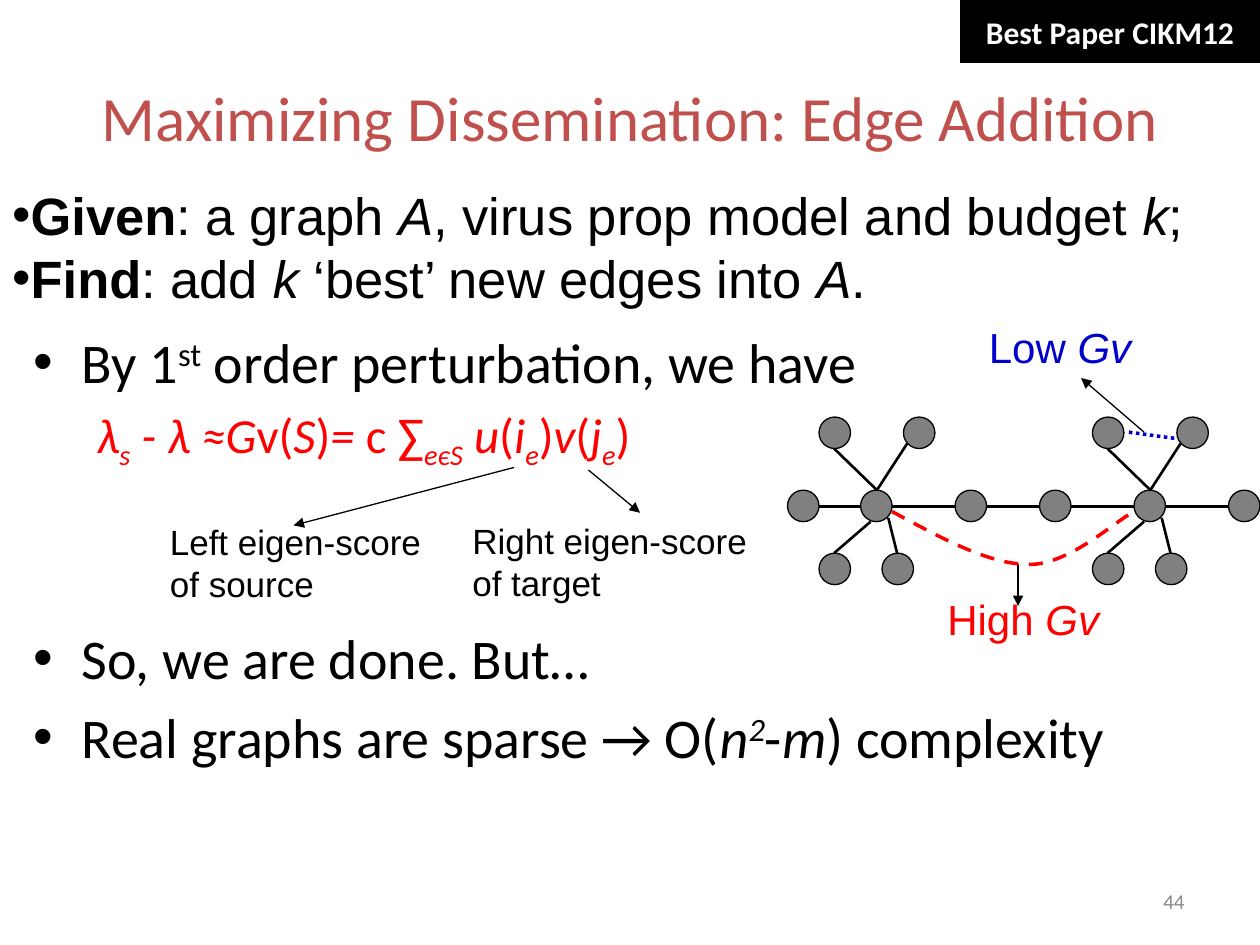
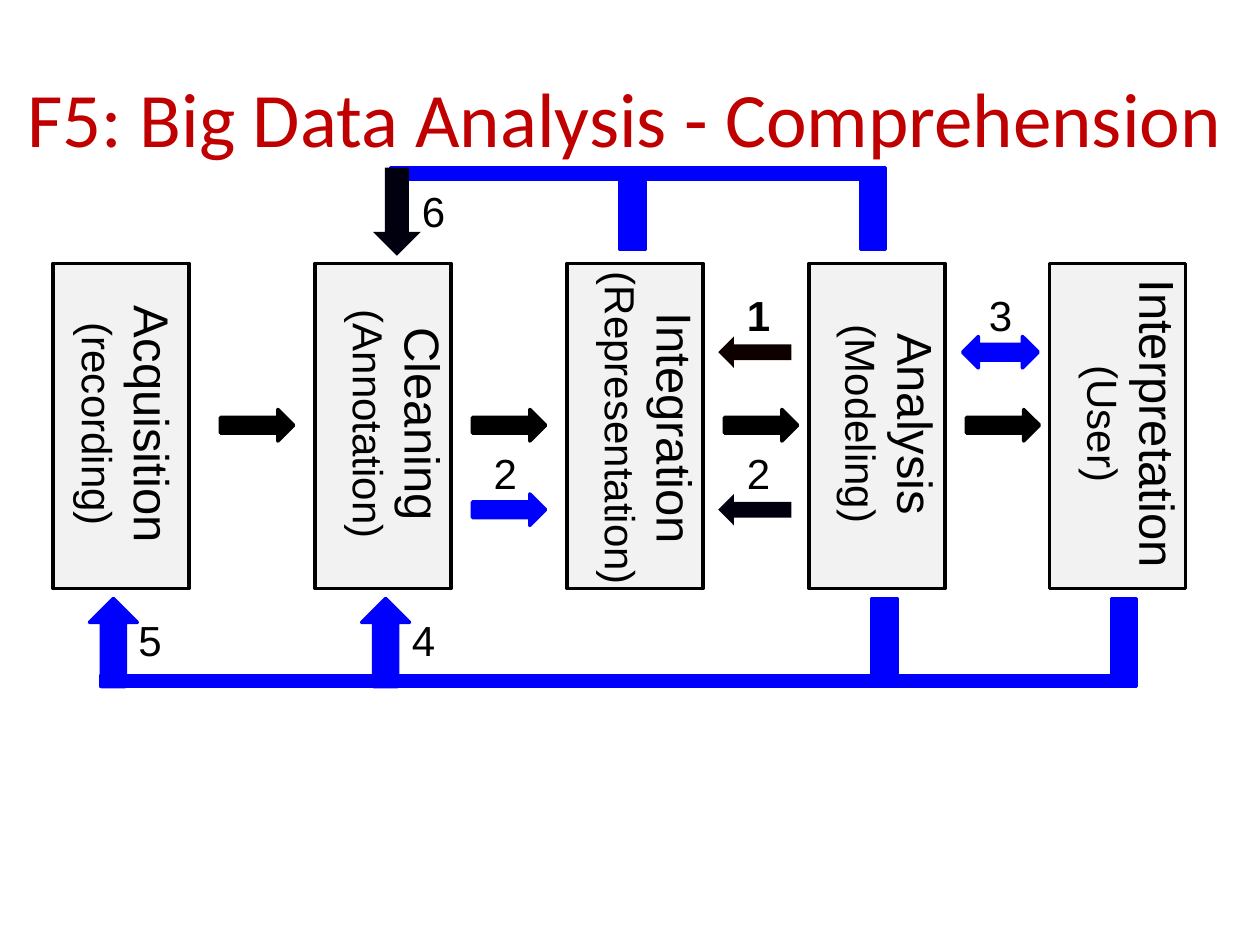
import pptx
import pptx.util
import pptx.dml.color
import pptx.enum.dml
import pptx.enum.shapes
import pptx.enum.text
import pptx.oxml.ns
import lxml.etree

Inches = pptx.util.Inches
Pt = pptx.util.Pt
RGB = pptx.dml.color.RGBColor.from_string
KIND = pptx.enum.shapes.MSO_SHAPE
DASH = pptx.enum.dml.MSO_LINE
ALIGN = pptx.enum.text.PP_ALIGN
MIDDLE = pptx.enum.text.MSO_ANCHOR.MIDDLE
FIT = pptx.enum.text.MSO_AUTO_SIZE.SHAPE_TO_FIT_TEXT
qn = pptx.oxml.ns.qn

HUES = {"black": "000000", "white": "FFFFFF", "coral": "C0504D",
        "crimson": "C00000", "red": "FF0000", "navy": "0000CC",
        "blue": "0000FF", "node": "808080", "box": "F2F2F2",
        "page": "898989", "dusk": "00000F", "rust": "0F0000"}
BASE = {"^": "30000", "_": "-25000"}
LEFT, MID, RIGHT = ALIGN.LEFT, ALIGN.CENTER, ALIGN.RIGHT


def write(shape, paras, size=24, hue="black", font="Arial", align=LEFT,
          wrap=False, anchor=None):
    """Fill a shape; a run is (text, marks): b bold, i italic, ^ super, _ sub."""
    frame = shape.text_frame
    frame.word_wrap = wrap
    if not wrap:
        frame.auto_size = FIT
    if anchor is not None:
        frame.vertical_anchor = anchor
    for n, para in enumerate(paras):
        if not isinstance(para, dict):
            para = {"runs": para}
        item = frame.paragraphs[0] if n == 0 else frame.add_paragraph()
        item.alignment = align
        props = item._p.get_or_add_pPr()
        if "indent" in para:
            left, first = para["indent"]
            props.set("marL", str(Inches(left)))
            props.set("indent", str(Inches(first)))
        if para.get("bullet"):
            lxml.etree.SubElement(props, qn("a:buFont")).set("typeface", "Arial")
            lxml.etree.SubElement(props, qn("a:buChar")).set("char", "•")
        if "before" in para:
            item.space_before = Pt(para["before"])
        runs = para["runs"]
        for text, marks in [(runs, "")] if isinstance(runs, str) else runs:
            run = item.add_run()
            run.text = text
            look = {"name": font, "size": Pt(para.get("size", size)),
                    "bold": "b" in marks, "italic": "i" in marks}
            for key, value in look.items():
                setattr(run.font, key, value)
            run.font.color.rgb = RGB(HUES[para.get("hue", hue)])
            for mark in BASE:
                if mark in marks:
                    run.font._element.set("baseline", BASE[mark])


def draw(slide, kind, box, fill, edge=None, width=2):
    shape = slide.shapes.add_shape(kind, *map(Inches, box))
    shape.shadow.inherit = False
    shape.fill.solid()
    shape.fill.fore_color.rgb = RGB(HUES[fill])
    if edge:
        shape.line.color.rgb = RGB(HUES[edge])
        shape.line.width = Pt(width)
    else:
        shape.line.fill.background()
    return shape


deck = pptx.Presentation()
deck.slide_width, deck.slide_height = Inches(10), Inches(7.5)
pages = []
for title, width, size, hue in [
        ("Maximizing Dissemination: Edge Addition", 10, 36, "coral"),
        ("F5: Big Data Analysis - Comprehension", 9.92, 44, "crimson")]:
    page = deck.slides.add_slide(deck.slide_layouts[6])
    head = page.shapes.add_textbox(0, Inches(0.3), Inches(width), Inches(1.25))
    write(head, [title], size, hue, "Calibri", MID, True, MIDDLE)
    pages.append(page)
graph, flow = pages

# Slide 1: problem statement and main points
goals = [
    {"bullet": True, "runs": [
        ("Given", "b"), (": a graph ", ""), ("A", "i"),
        (", virus prop model and budget ", ""), ("k", "i"), (";", "")]},
    {"bullet": True, "runs": [
        ("Find", "b"), (": add ", ""), ("k", "i"),
        (" ‘best’ new edges into ", ""), ("A", "i"), (".", "")]}]
point = {"bullet": True, "indent": (0.38, -0.38)}
steps = [
    {**point, "runs": [("By 1", ""), ("st", "^"),
                       (" order perturbation, we have", "")]},
    {"indent": (0.81, -0.31), "before": 5.6, "size": 28, "hue": "red", "runs": [
        ("λ", "i"), ("s", "i_"), (" - λ ≈G", "i"), ("v(", ""), ("S", "i"),
        (")", ""), ("=", "i"), (" c ∑", ""), ("eєS", "i_"), (" u", "i"),
        ("(", ""), ("i", "i"), ("e", "i_"), (")", ""), ("v", "i"),
        ("(", ""), ("j", "i"), ("e", "i_"), (")", "")]},
    {**point, "before": 87, "runs": "So, we are done. But…"},
    {**point, "before": 6.4, "runs": [
        ("Real graphs are sparse → O(", ""), ("n", "i"), ("2", "i^"),
        ("-", ""), ("m", "i"), (") complexity", "")]}]
body = {"size": 32, "font": "Calibri", "wrap": True}
for box, paras, form in [
        ((0, 1.4, 10, 1.1), goals, {"size": 30, "wrap": True}),
        ((0.17, 2.55, 9, 4.32), steps, body),
        ((1.25, 4.08, 2.27, 0.77), ["Left eigen-score", "of source"], {"size": 20}),
        ((3.65, 4.07, 2.45, 0.77), ["Right eigen-score", "of target"], {"size": 20}),
        ((7.75, 2.5, 1.33, 0.5), [[("Low ", ""), ("Gv", "i")]], {"hue": "navy"}),
        ((7.42, 4.66, 1.42, 0.5), [[("High ", ""), ("Gv", "i")]], {"hue": "red"}),
        ((7.17, 6.95, 2.33, 0.4), ["44"],
         {"size": 12, "hue": "page", "font": "Calibri", "align": RIGHT,
          "wrap": True, "anchor": MIDDLE})]:
    write(graph.shapes.add_textbox(*map(Inches, box)), paras, **form)

# Network: a middle row and two equal hubs
DOT, ROW, SHIFT = 0.25, 3.89, 2.17
row = [6.25, 6.83, 7.58, 8.25, 9, 9.75]
nodes = [(x, ROW) for x in row]
wires = [(a + DOT, 4.02, b, 4.02) for a, b in zip(row, row[1:])]
for dx in (0, SHIFT):
    nodes += [(x + dx, y) for x, y in
              [(6.5, 3.31), (7.17, 3.31), (6.5, 4.39), (7, 4.39)]]
    wires += [(a + dx, b, c + dx, d) for a, b, c, d in
              [(6.96, ROW, 7.2, 3.52), (6.96, ROW, 6.62, 3.56),
               (6.62, 4.39, 6.91, 4.14), (7.12, 4.39, 7.05, 4.11)]]
for x, y in nodes:
    draw(graph, KIND.OVAL, (x, y, DOT, DOT), "node", "black", 0.75)

# Edges, the dotted new edge and the pointers
lines = [(wire, "black", 1.5, "") for wire in wires]
lines.append(((8.96, 3.43, 9.33, 3.48), "navy", 2, "dot"))
lines += [(way, "black", 0.75, "arrow") for way in
          [(4.08, 3.71, 2.33, 4.17), (4.67, 3.73, 5.08, 4.07),
           (9.08, 3.43, 8.58, 3), (8.08, 4.48, 8.08, 4.81)]]
for ends, hue, width, style in lines:
    link = graph.shapes.add_connector(
        pptx.enum.shapes.MSO_CONNECTOR.STRAIGHT, *map(Inches, ends))
    link.line.color.rgb = RGB(HUES[hue])
    link.line.width = Pt(width)
    if style == "dot":
        link.line.dash_style = DASH.ROUND_DOT
        link.line._ln.find(qn("a:prstDash")).set("val", "sysDot")
    if style == "arrow":
        tip = lxml.etree.SubElement(link.line._ln, qn("a:tailEnd"))
        tip.set("type", "triangle")
    lxml.etree.SubElement(link._element.spPr, qn("a:effectLst"))

# Dashed curve between the hubs: each three points make one Bezier piece
bend = [(7.08, 4.06), (7.47, 4.27), (7.85, 4.48), (8.17, 4.48),
        (8.49, 4.48), (8.86, 4.13), (9, 4.06)]
bend = [(Inches(x), Inches(y)) for x, y in bend]
pen = graph.shapes.build_freeform(*bend[0])
pen.add_line_segments(bend[1:], close=False)
curve = pen.convert_to_shape()
curve.shadow.inherit = False
curve.fill.background()
curve.line.color.rgb = RGB(HUES["red"])
curve.line.width = Pt(2)
curve.line.dash_style = DASH.DASH
trace = next(curve._element.iter(qn("a:path")))
legs = trace.findall(qn("a:lnTo"))
for n in range(0, len(legs), 3):
    piece = lxml.etree.SubElement(trace, qn("a:cubicBezTo"))
    for leg in legs[n:n + 3]:
        piece.append(leg[0])
        trace.remove(leg)

# Award tag
tag = draw(graph, KIND.RECTANGLE, (7.62, 0, 2.38, 0.5), "black")
write(tag, [[("Best Paper CIKM12", "b")]], 18, "white", "Calibri", MID, True, MIDDLE)

# Slide 2: feedback bars and arrows
for box in [(0.8, 5.36, 8.22, 0.09), (8.82, 4.75, 0.2, 0.65),
            (6.92, 4.75, 0.2, 0.65), (3.1, 1.33, 3.8, 0.09),
            (6.83, 1.33, 0.2, 0.65), (4.92, 1.33, 0.2, 0.65)]:
    draw(flow, KIND.RECTANGLE, box, "blue", "blue")
for x in (0.71, 2.87):
    draw(flow, KIND.UP_ARROW, (x, 4.75, 0.38, 0.7), "blue", "blue")
draw(flow, KIND.RIGHT_ARROW, (3.75, 3.92, 0.58, 0.25), "blue", "blue")
draw(flow, KIND.LEFT_RIGHT_ARROW, (7.64, 2.67, 0.6, 0.25), "blue", "blue")
draw(flow, KIND.DOWN_ARROW, (2.96, 1.33, 0.38, 0.7), "dusk")
draw(flow, KIND.LEFT_ARROW, (5.7, 3.92, 0.58, 0.25), "dusk")
draw(flow, KIND.LEFT_ARROW, (5.7, 2.67, 0.58, 0.25), "rust")

# Stages with sideways labels
for x, left, top, tall, name, note in [
        (0.42, 0.42, 2.33, 2, "Acquisition", "(recording)"),
        (2.5, 2.57, 2.36, 1.94, "Cleaning", "(Annotation)"),
        (4.5, 4.57, 2.06, 2.61, "Integration", "(Representation)"),
        (6.42, 6.48, 2.48, 1.69, "Analysis", "(Modeling)"),
        (8.33, 8.4, 2.12, 2.42, "Interpretation", "(User)")]:
    draw(flow, KIND.RECTANGLE, (x, 2.09, 1.08, 2.58), "box", "black")
    label = flow.shapes.add_textbox(*map(Inches, (left, top, 1.08, tall)))
    write(label, [{"runs": name, "size": 28}, note], align=MID)
    label.text_frame._txBody.bodyPr.set("vert", "eaVert")
for x in (1.75, 3.75, 5.75, 7.67):
    draw(flow, KIND.RIGHT_ARROW, (x, 3.25, 0.58, 0.25), "black", "black")

# Step numbers
for x, y, digit, marks in [
        (5.83, 2.25, "1", "b"), (5.83, 3.5, "2", ""), (3.82, 3.5, "2", ""),
        (7.75, 2.25, "3", ""), (3.17, 4.83, "4", ""), (1, 4.83, "5", ""),
        (3.25, 1.42, "6", "")]:
    mark = flow.shapes.add_textbox(*map(Inches, (x, y, 0.39, 0.5)))
    write(mark, [[(digit, marks)]])

deck.save("out.pptx")
